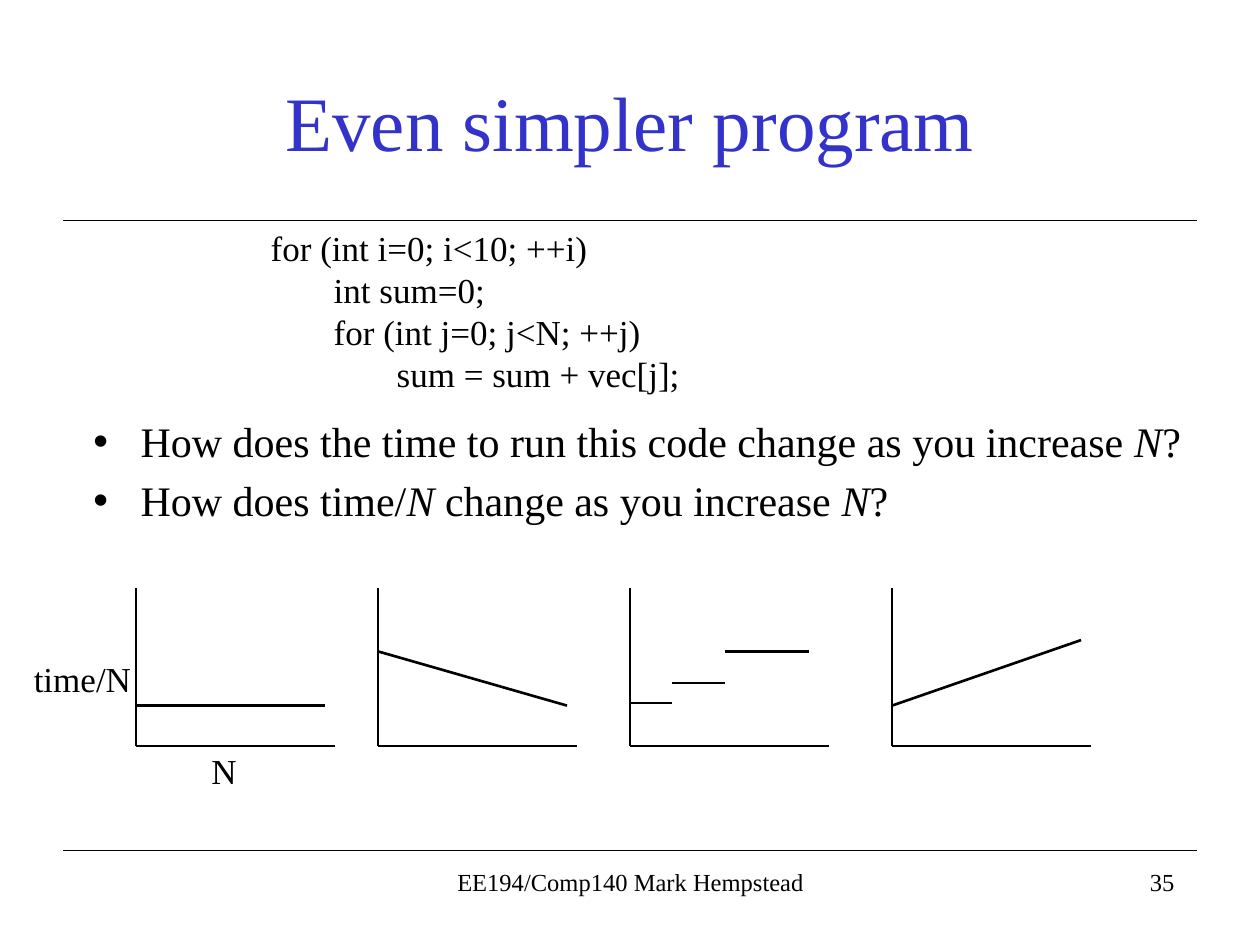
from lxml import etree
from pptx import Presentation
from pptx.dml.color import RGBColor
from pptx.enum.shapes import MSO_CONNECTOR
from pptx.enum.text import MSO_ANCHOR, MSO_AUTO_SIZE, PP_ALIGN
from pptx.oxml.ns import qn
from pptx.util import Inches, Pt

STRAIGHT = MSO_CONNECTOR.STRAIGHT
LEFT, CENTER, RIGHT = PP_ALIGN.LEFT, PP_ALIGN.CENTER, PP_ALIGN.RIGHT
TOP, MIDDLE = MSO_ANCHOR.TOP, MSO_ANCHOR.MIDDLE
NO_AUTOFIT = MSO_AUTO_SIZE.NONE

THEME = {
    "font": "Times New Roman",
    "ink": RGBColor(0x00, 0x00, 0x00),
    "accent": RGBColor(0x33, 0x33, 0xCC),
    "title": 44, "body": 24, "code": 20, "footer": 14,
    "rule": 0.75, "graph": 1.5,
}

# Content
TITLE = "Even simpler program"
CODE = [  # (indent level, line)
    (0, "for (int i=0; i<10; ++i)"),
    (1, "int sum=0;"),
    (1, "for (int j=0; j<N; ++j)"),
    (2, "sum = sum + vec[j];"),
]
QUESTIONS = [  # (text, italic) spans
    [("How does the time to run this code change as you increase ", False),
     ("N", True), ("?", False)],
    [("How does time/", False), ("N", True),
     (" change as you increase ", False), ("N", True), ("?", False)],
]
LABELS = [  # (text, box, size, alignment)
    ("time/N", (0.17, 5.17, 1, 0.44), "code", LEFT),
    ("N", (1.58, 5.9, 0.42, 0.44), "code", LEFT),
    ("EE194/Comp140 Mark Hempstead", (3.42, 6.83, 3.17, 0.5), "footer", CENTER),
    ("35", (6.25, 6.83, 3.17, 0.5), "footer", RIGHT),
]
RULES = (1.75, 6.75)
AXIS_TOP, AXIS_BOTTOM, AXIS_WIDTH = 4.67, 5.92, 1.58
GRAPHS = [  # (origin x, segments as (x offset, y, x offset, y))
    (1.08, [(0, 5.6, 1.5, 5.6)]),
    (3, [(0, 5.17, 1.5, 5.6)]),
    (5, [(0, 5.58, 0.33, 5.58), (0.33, 5.42, 0.75, 5.42),
         (0.75, 5.17, 1.42, 5.17)]),
    (7.08, [(0, 5.6, 1.5, 5.08)]),
]


def style(para, size, color="ink", align=LEFT):
    para.alignment = align
    para.font.name = THEME["font"]
    para.font.size = Pt(THEME[size])
    para.font.color.rgb = THEME[color]


def place(shape, box, anchor=TOP):
    shape.left, shape.top, shape.width, shape.height = map(Inches, box)
    frame = shape.text_frame
    frame.auto_size = NO_AUTOFIT
    frame.vertical_anchor = anchor
    return frame


def add_text_box(slide, box, wrap=True):
    frame = slide.shapes.add_textbox(*map(Inches, box)).text_frame
    frame.word_wrap = wrap
    return frame


def next_paragraph(frame, index):
    return frame.add_paragraph() if index else frame.paragraphs[0]


def add_line(slide, x1, y1, x2, y2, weight):
    line = slide.shapes.add_connector(STRAIGHT, *map(Inches, (x1, y1, x2, y2)))
    line.line.color.rgb = THEME["ink"]
    line.line.width = Pt(THEME[weight])
    etree.SubElement(line._element.spPr, qn("a:effectLst"))


deck = Presentation()
deck.slide_width, deck.slide_height = Inches(10), Inches(7.5)
slide = deck.slides.add_slide(deck.slide_layouts[1])
title, body = slide.placeholders[0], slide.placeholders[1]

# Rules above and below the content
for y in RULES:
    add_line(slide, 0.5, y, 9.5, y, "rule")

# Title
frame = place(title, (0.75, 0.33, 8.5, 1.25), MIDDLE)
frame.text = TITLE
style(frame.paragraphs[0], "title", "accent", CENTER)

# Questions
frame = place(body, (0.64, 3.25, 8.85, 0.92))
for index, spans in enumerate(QUESTIONS):
    para = next_paragraph(frame, index)
    style(para, "body")
    for text, italic in spans:
        span = para.add_run()
        span.text = text
        span.font.italic = italic

# Code, indented half an inch per level
frame = add_text_box(slide, (2.05, 1.75, 6.95, 1.45))
for index, (level, text) in enumerate(CODE):
    para = next_paragraph(frame, index)
    para.text = text
    para.level = level
    style(para, "code")
    properties = para._p.get_or_add_pPr()
    properties.set("marL", str(Inches(0.5 * level)))
    properties.set("indent", "0")

# Axis labels and footer
for text, box, size, align in LABELS:
    frame = add_text_box(slide, box)
    frame.text = text
    style(frame.paragraphs[0], size, align=align)

# Candidate graphs
for x, segments in GRAPHS:
    add_line(slide, x, AXIS_TOP, x, AXIS_BOTTOM, "graph")
    add_line(slide, x, AXIS_BOTTOM, x + AXIS_WIDTH, AXIS_BOTTOM, "graph")
    for start, y1, end, y2 in segments:
        add_line(slide, x + start, y1, x + end, y2, "graph")

deck.save("out.pptx")
